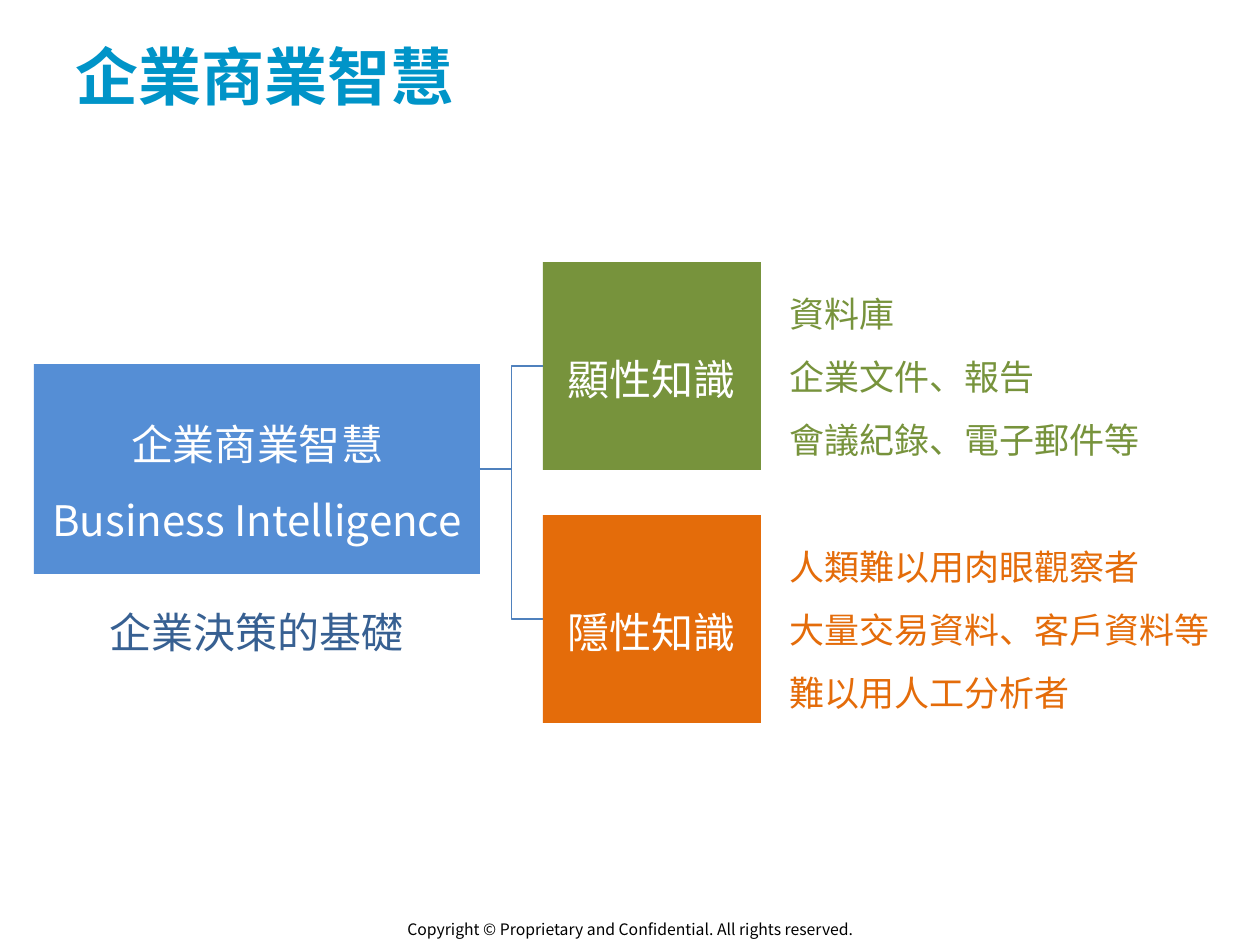
"""Builds the business intelligence slide with its two kinds of knowledge."""
from lxml.etree import SubElement
from pptx import Presentation
from pptx.dml.color import RGBColor
from pptx.enum.shapes import MSO_CONNECTOR, MSO_SHAPE
from pptx.enum.text import MSO_ANCHOR, MSO_AUTO_SIZE, PP_ALIGN
from pptx.oxml.ns import qn
from pptx.util import Emu, Pt

FONT = "Noto Sans CJK SC"
COLORS = {
    "title": "0094C8", "root": "558ED5", "explicit": "77933C", "tacit": "E46C0A",
    "basis": "376092", "line": "4F81BD", "white": "FFFFFF", "black": "000000",
}
LEFT, CENTER = PP_ALIGN.LEFT, PP_ALIGN.CENTER


def px(*lengths):
    return [Emu(round(length * 914400 / 126)) for length in lengths]


def write(shape, lines, size, color, alignment, spacing=1.5, bold=False):
    frame = shape.text_frame
    frame_format = {
        "word_wrap": True,
        "auto_size": MSO_AUTO_SIZE.NONE,
        "vertical_anchor": MSO_ANCHOR.MIDDLE,
    }
    for name, value in frame_format.items():
        setattr(frame, name, value)
    frame.text = "\n".join(lines)
    for paragraph in frame.paragraphs:
        paragraph.alignment = alignment
        paragraph.line_spacing = spacing
        run = paragraph.runs[0]
        run.font.color.rgb = RGBColor.from_string(COLORS[color])
        for name, value in {"size": Pt(size), "bold": bold, "name": FONT}.items():
            setattr(run.font, name, value)
        SubElement(run.font._element, qn("a:ea"), typeface=FONT)


presentation = Presentation()
presentation.slide_width, presentation.slide_height = px(1260, 945)
slide = presentation.slides.add_slide(presentation.slide_layouts[5])
shapes = slide.shapes

title = shapes.title
title.left, title.top, title.width, title.height = px(63, -4, 1134, 158)
write(title, ["企業商業智慧"], 36, "title", LEFT, spacing=1.0, bold=True)

boxes = {}
for key, bounds, lines in [
    ("root", (34, 364, 446, 210), ["企業商業智慧", "Business Intelligence"]),
    ("explicit", (543, 262, 218, 208), ["顯性知識"]),
    ("tacit", (543, 515, 218, 208), ["隱性知識"]),
]:
    box = shapes.add_shape(MSO_SHAPE.RECTANGLE, *px(*bounds))
    box.shadow.inherit = False
    box.fill.solid()
    box.fill.fore_color.rgb = RGBColor.from_string(COLORS[key])
    box.line.fill.background()
    write(box, lines, 24, "white", CENTER)
    boxes[key] = box

for bounds, lines, size, color, alignment, spacing in [
    ((777, 262, 465, 208), ["資料庫", "企業文件、報告", "會議紀錄、電子郵件等"],
     20, "explicit", LEFT, 1.5),
    ((777, 515, 465, 208), ["人類難以用肉眼觀察者", "大量交易資料、客戶資料等", "難以用人工分析者"],
     20, "tacit", LEFT, 1.5),
    ((34, 515, 446, 208), ["企業決策的基礎"], 24, "basis", CENTER, 1.5),
    ((0, 913, 1260, 32),
     ["Copyright © Proprietary and Confidential. All rights reserved."],
     9, "black", CENTER, 1.0),
]:
    write(shapes.add_textbox(*px(*bounds)), lines, size, color, alignment, spacing)

for key in ("explicit", "tacit"):
    connector = shapes.add_connector(MSO_CONNECTOR.ELBOW, 0, 0, 0, 0)
    connector.begin_connect(boxes["root"], 3)
    connector.end_connect(boxes[key], 1)
    connector.line.color.rgb = RGBColor.from_string(COLORS["line"])
    connector.line.width = Pt(0.79)
    SubElement(connector._element.spPr, qn("a:effectLst"))

presentation.save("out.pptx")
